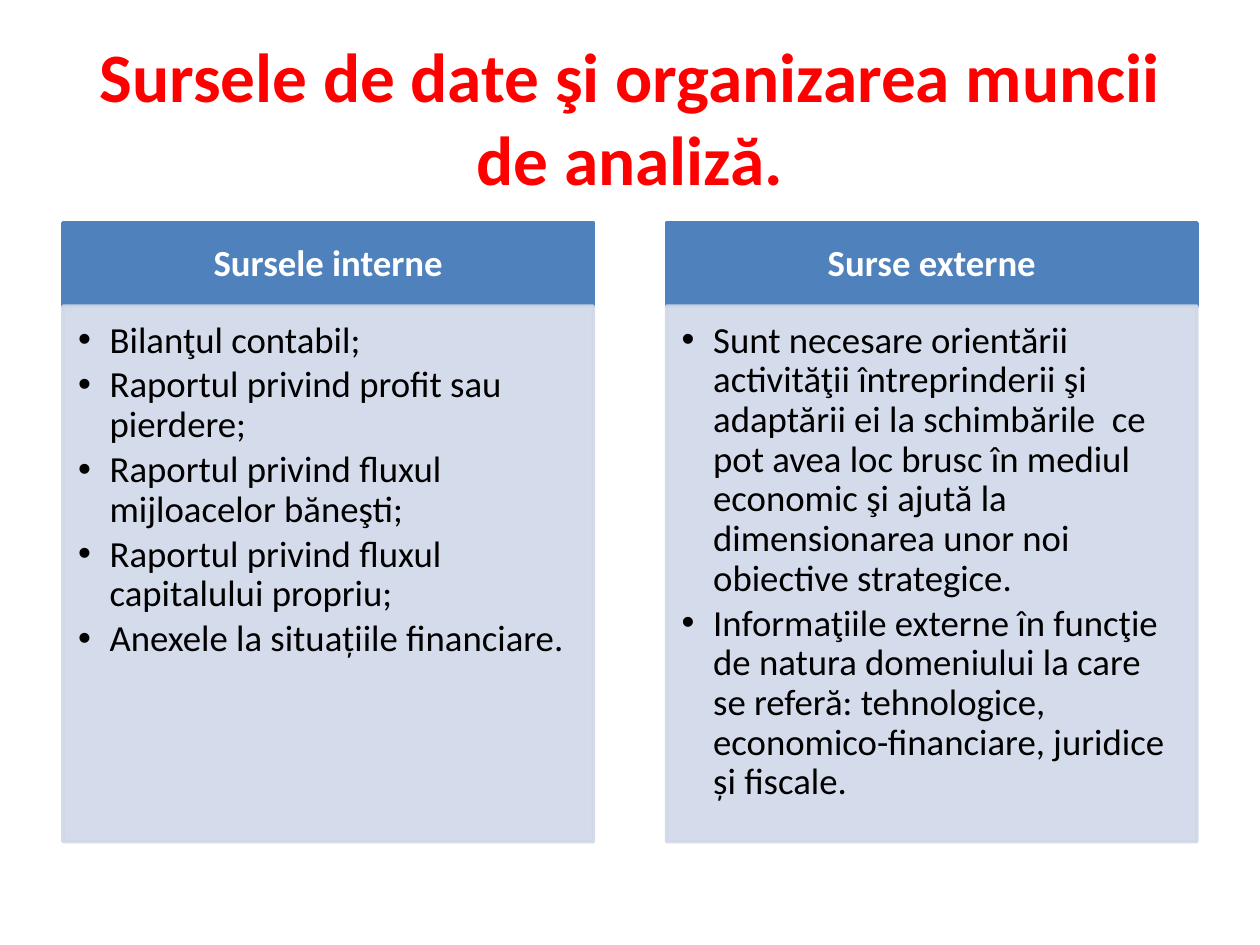
from dataclasses import dataclass

from lxml.etree import SubElement
from pptx import Presentation
from pptx.dml.color import RGBColor
from pptx.enum.text import MSO_ANCHOR, MSO_AUTO_SIZE, PP_ALIGN
from pptx.oxml.ns import qn
from pptx.util import Inches, Pt


@dataclass(frozen=True)
class Theme:
    font: str = "Calibri"
    title_color: RGBColor = RGBColor(0xFF, 0x00, 0x00)
    header_fill: RGBColor = RGBColor(0x4F, 0x81, 0xBD)
    header_text: RGBColor = RGBColor(0xFF, 0xFF, 0xFF)
    panel_fill: RGBColor = RGBColor(0xD0, 0xD8, 0xE8)
    panel_text: RGBColor = RGBColor(0x00, 0x00, 0x00)
    panel_opacity: int = 90
    title_size: float = 39.6
    text_size: float = 21


THEME = Theme()

# Column grid
MARGIN = 0.5
COLUMN_WIDTH = 4.21
COLUMN_STEP = 4.79
HEADER_TOP, HEADER_HEIGHT = 1.77, 0.66
PANEL_HEIGHT = 4.25

COLUMNS = [
    ("Sursele interne", [
        "Bilanţul contabil;",
        "Raportul privind profit sau pierdere;",
        "Raportul privind fluxul mijloacelor băneşti;",
        "Raportul privind fluxul capitalului propriu;",
        "Anexele la situațiile financiare.",
    ]),
    ("Surse externe", [
        "Sunt necesare orientării activităţii întreprinderii şi adaptării ei "
        "la schimbările  ce pot avea loc brusc în mediul economic şi ajută la "
        "dimensionarea unor noi obiective strategice.",
        "Informaţiile externe în funcţie de natura domeniului la care se "
        "referă: tehnologice, economico-financiare, juridice și fiscale.",
    ]),
]


def place(holder, left, top, width, height):
    holder.left, holder.top = Inches(left), Inches(top)
    holder.width, holder.height = Inches(width), Inches(height)


def format_text(holder, size, color, bold, anchor):
    frame = holder.text_frame
    frame.auto_size = MSO_AUTO_SIZE.NONE
    frame.word_wrap = True
    frame.vertical_anchor = anchor
    for paragraph in frame.paragraphs:
        for run in paragraph.runs:
            run.font.name = THEME.font
            run.font.size = Pt(size)
            run.font.bold = bold
            run.font.color.rgb = color


def set_insets(frame, left, top, right, bottom):
    frame.margin_left, frame.margin_top = Inches(left), Inches(top)
    frame.margin_right, frame.margin_bottom = Inches(right), Inches(bottom)


def paint(holder, color, opacity=100):
    holder.fill.solid()
    holder.fill.fore_color.rgb = color
    holder.line.color.rgb = color
    holder.line.width = Pt(2)
    if opacity < 100:
        for tint in holder.element.spPr.iter(qn("a:srgbClr")):
            SubElement(tint, qn("a:alpha"), val=str(opacity * 1000))


def add_title(holder, text):
    place(holder, MARGIN, 0.3, 9, 1.25)
    holder.text_frame.text = text
    holder.text_frame.paragraphs[0].alignment = PP_ALIGN.CENTER
    format_text(holder, THEME.title_size, THEME.title_color, True, MSO_ANCHOR.MIDDLE)


def add_header(holder, left, text):
    place(holder, left, HEADER_TOP, COLUMN_WIDTH, HEADER_HEIGHT)
    paint(holder, THEME.header_fill)
    holder.text_frame.text = text
    heading = holder.text_frame.paragraphs[0]
    heading.alignment = PP_ALIGN.CENTER
    heading.line_spacing = 0.9
    heading.space_before = Pt(0)
    set_insets(holder.text_frame, 0.16, 0.09, 0.16, 0.09)
    format_text(holder, THEME.text_size, THEME.header_text, True, MSO_ANCHOR.MIDDLE)


def add_bullet_panel(holder, left, items):
    place(holder, left, HEADER_TOP + HEADER_HEIGHT, COLUMN_WIDTH, PANEL_HEIGHT)
    paint(holder, THEME.panel_fill, THEME.panel_opacity)
    holder.text_frame.text = "\n".join(items)
    for item in holder.text_frame.paragraphs:
        item.line_spacing = 0.9
        item.space_before = Pt(0)
        item.space_after = Pt(3)
        properties = item._p.get_or_add_pPr()
        properties.set("marL", str(Inches(0.25)))
        properties.set("indent", str(Inches(-0.25)))
    set_insets(holder.text_frame, 0.12, 0.12, 0.16, 0.18)
    format_text(holder, THEME.text_size, THEME.panel_text, False, MSO_ANCHOR.TOP)


def main():
    presentation = Presentation()
    presentation.slide_width, presentation.slide_height = Inches(10), Inches(7.5)

    # The comparison layout holds a title and two header/list pairs
    slide = presentation.slides.add_slide(presentation.slide_layouts[4])
    title, *holders = slide.placeholders
    add_title(title, "Sursele de date şi organizarea muncii de analiză.")

    # Internal and external sources side by side
    pairs = zip(holders[::2], holders[1::2])
    for index, ((header, panel), (heading, items)) in enumerate(zip(pairs, COLUMNS)):
        left = MARGIN + index * COLUMN_STEP
        add_header(header, left, heading)
        add_bullet_panel(panel, left, items)

    presentation.save("out.pptx")


if __name__ == "__main__":
    main()
